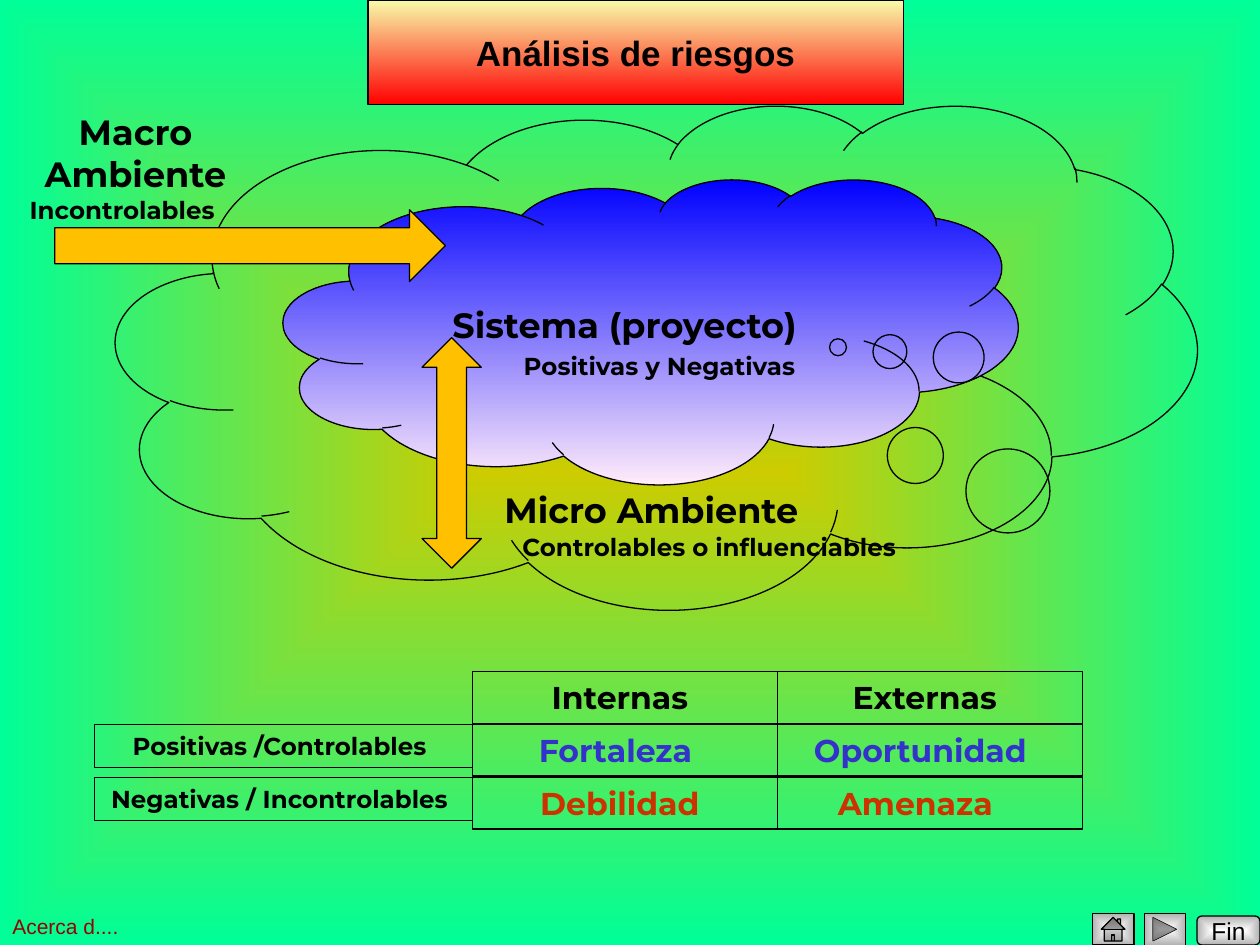
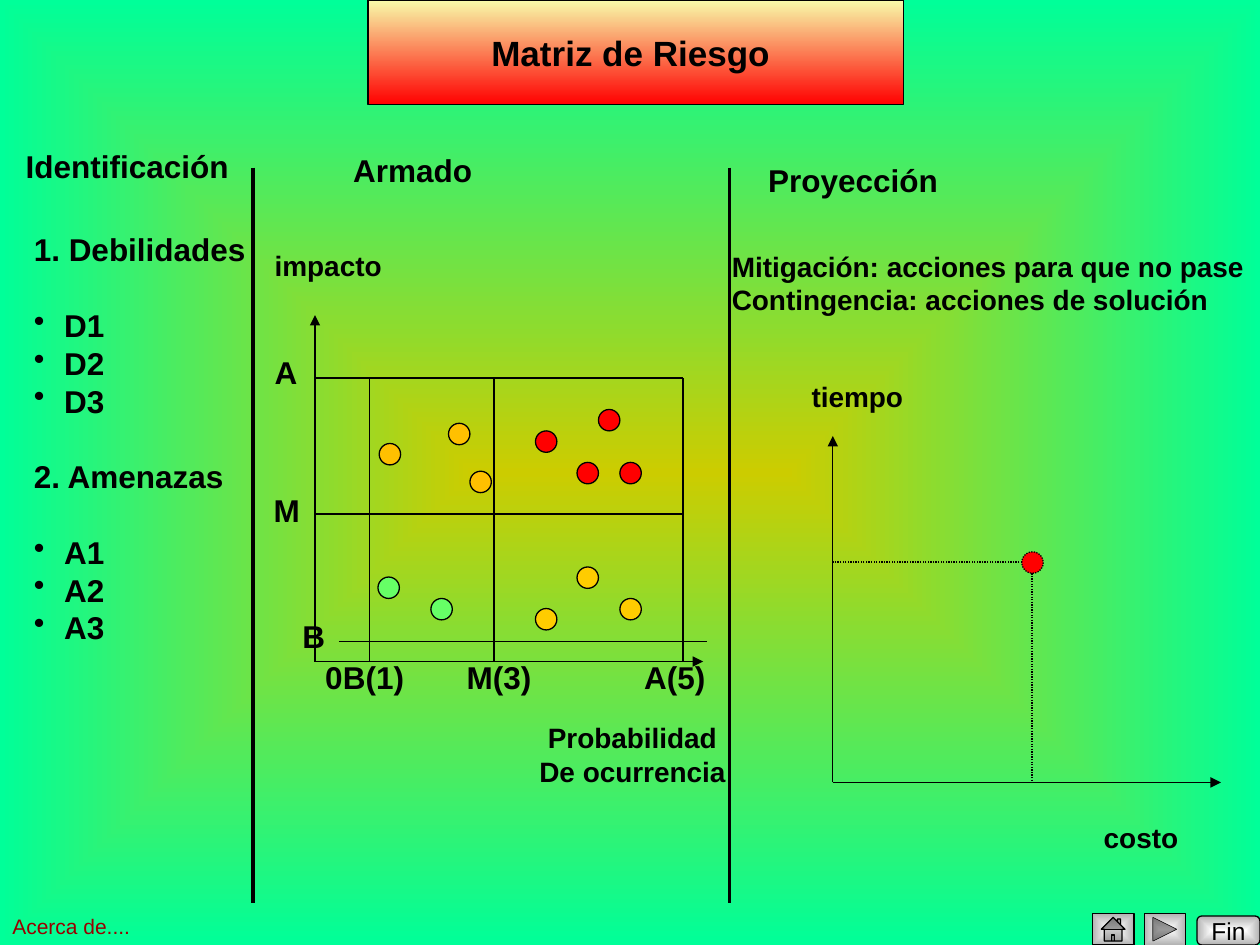
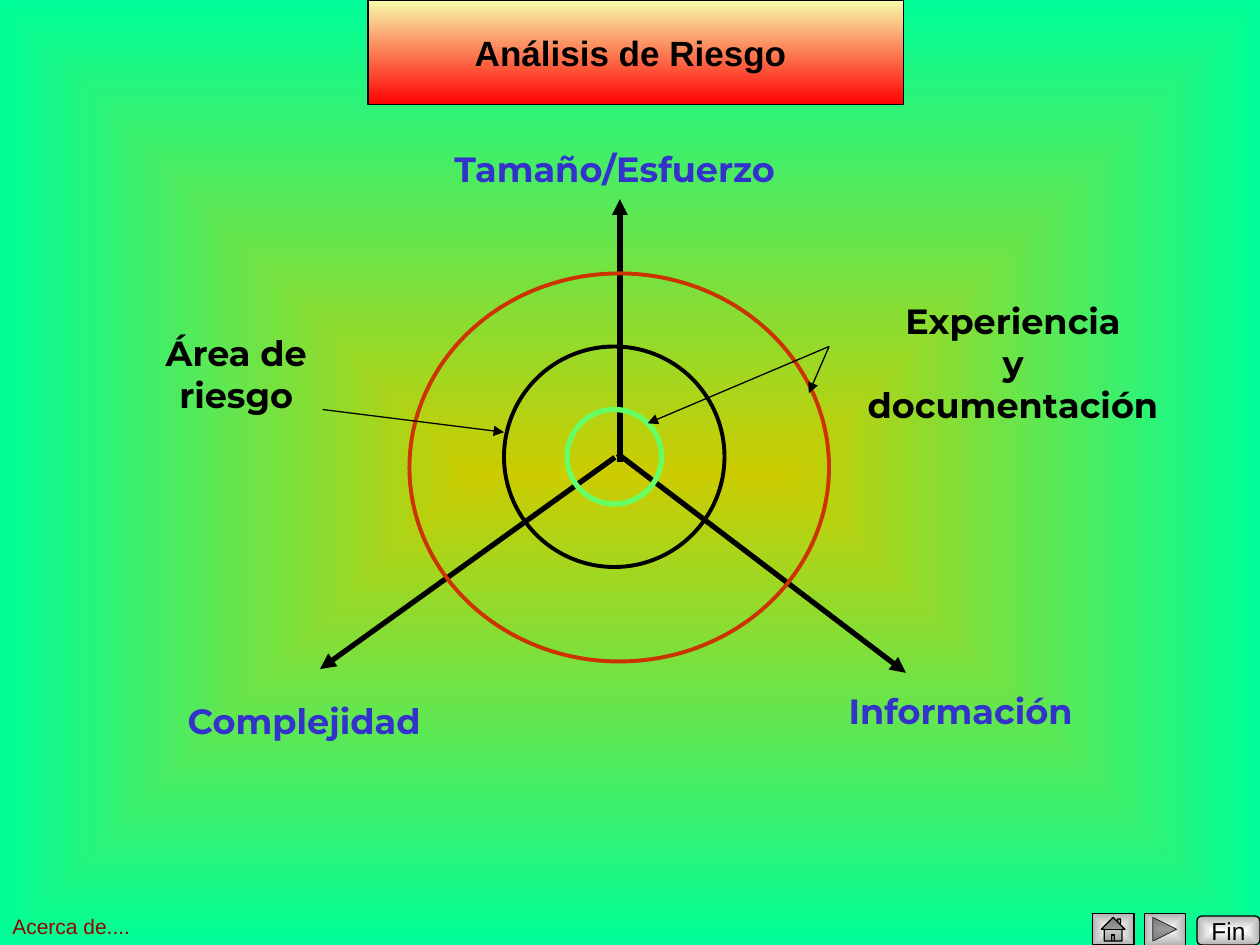
from dataclasses import dataclass
from typing import Any

from lxml.etree import SubElement
from pptx import Presentation
from pptx.dml.color import RGBColor
from pptx.enum.dml import MSO_LINE
from pptx.enum.shapes import MSO_CONNECTOR, MSO_SHAPE
from pptx.enum.text import MSO_ANCHOR, MSO_AUTO_SIZE, PP_ALIGN
from pptx.oxml import parse_xml
from pptx.oxml.ns import nsdecls, qn
from pptx.util import Inches, Pt

BLACK, BLUE, RUST, MAROON = "000000", "3333CC", "CC3300", "990000"
RED, AMBER, YELLOW, GREEN = "FF0000", "FFC000", "FFCC00", "66FF66"
BACKDROP = ("CCCC00", "00FF99")
TITLE_BAND = ("F8FCAA", "FF0000")
CLOUD = ("0000FF", "FFEBFA")
BUTTON = ("FFFFFF", "B2B2B2")
SANS, DISPLAY = "Arial", "Montserrat"
OFF_CENTRE = 0.18  # right inset that sets centred words slightly to the left


# Formatting helpers
def color(hex_value):
    return RGBColor.from_string(hex_value)


def apply(target, values):
    for name, value in values.items():
        setattr(target, name, value)


def gradient(fill, element, stops, center=None):
    """Top-down gradient, or one spreading from the middle when center is given."""
    fill.gradient()
    for stop, hex_value, position in zip(fill.gradient_stops, stops, (0, 1)):
        stop.color.rgb = color(hex_value)
        stop.position = position
    if center is None:
        fill.gradient_angle = 270
        return
    linear = next(element.iter(qn("a:lin")))
    linear.getparent().replace(linear, parse_xml(
        f'<a:path {nsdecls("a")} path="{center}"><a:fillToRect '
        'l="50000" t="50000" r="50000" b="50000"/></a:path>'))


def outline(line, hex_value=BLACK, width=0.75, dotted=False):
    line.color.rgb = color(hex_value)
    line.width = Pt(width)
    if dotted:
        line.dash_style = MSO_LINE.ROUND_DOT


def write(frame, lines, size, font=SANS, ink=BLACK, bold=True,
          align=PP_ALIGN.CENTER, **frame_format):
    apply(frame, {"word_wrap": False, **frame_format})
    for index, line in enumerate(lines):
        paragraph = frame.paragraphs[0] if index == 0 else frame.add_paragraph()
        paragraph.alignment = align
        run = paragraph.add_run()
        run.text = line
        apply(run.font, {"name": font, "size": Pt(size), "bold": bold})
        run.font.color.rgb = color(ink)


@dataclass
class Region:
    """Part of a slide; lengths are inches from its top left corner."""
    slide: Any
    left: float = 0
    top: float = 0

    def place(self, x, y):
        return Inches(self.left + x), Inches(self.top + y)

    def shape(self, preset, x, y, width, height, fill=None, edge=BLACK, weight=0.75,
              center=None, adjust=(), dotted=False):
        item = self.slide.shapes.add_shape(
            preset, *self.place(x, y), Inches(width), Inches(height))
        item.shadow.inherit = False
        if fill is None:
            item.fill.background()
        elif isinstance(fill, tuple):
            gradient(item.fill, item._element, fill, center)
        else:
            item.fill.solid()
            item.fill.fore_color.rgb = color(fill)
        outline(item.line, edge, weight, dotted)
        for index, value in enumerate(adjust):
            item.adjustments[index] = value
        return item

    def text(self, lines, x, y, width, height, size, **look):
        box = self.slide.shapes.add_textbox(
            *self.place(x, y), Inches(width), Inches(height))
        write(box.text_frame, lines, size,
              **{"auto_size": MSO_AUTO_SIZE.SHAPE_TO_FIT_TEXT, **look})
        return box

    def line(self, start, end, weight=0.75, arrow=False, dotted=False):
        link = self.slide.shapes.add_connector(
            MSO_CONNECTOR.STRAIGHT, *self.place(*start), *self.place(*end))
        outline(link.line, BLACK, weight, dotted)
        properties = link._element.spPr
        if arrow:
            SubElement(properties.find(qn("a:ln")), qn("a:tailEnd"), type="triangle")
        SubElement(properties, qn("a:effectLst"))

    def dots(self, fill, spots, dotted=False):
        for x, y in spots:
            self.shape(MSO_SHAPE.FLOWCHART_CONNECTOR, x, y, 0.17, 0.17, fill,
                       dotted=dotted)


# Parts shared by all slides
def title_band(slide, heading, right_inset):
    title = slide.shapes.title
    apply(title, {"left": Inches(2.92), "top": Inches(0),
                  "width": Inches(4.25), "height": Inches(0.83)})
    title._element.spPr.find(qn("a:xfrm")).addnext(parse_xml(
        f'<a:prstGeom {nsdecls("a")} prst="downArrowCallout"><a:avLst/></a:prstGeom>'))
    for index, value in enumerate((1.275, 1.275, 0.167, 0.667)):
        title.adjustments[index] = value
    gradient(title.fill, title._element, TITLE_BAND)
    outline(title.line)
    write(title.text_frame, [heading], 20, auto_size=MSO_AUTO_SIZE.NONE,
          vertical_anchor=MSO_ANCHOR.MIDDLE, margin_right=Inches(right_inset))


def footer(region, about):
    end = region.shape(MSO_SHAPE.ROUNDED_RECTANGLE, 9.5, 0.07, 0.5, 0.23, BUTTON,
                       center="shape")
    write(end.text_frame, ["Fin"], 14, bold=False,
          vertical_anchor=MSO_ANCHOR.MIDDLE)
    for preset, x, weight in ((MSO_SHAPE.ACTION_BUTTON_FORWARD_OR_NEXT, 9.08, 0.25),
                              (MSO_SHAPE.ACTION_BUTTON_HOME, 8.67, 0.75)):
        region.shape(preset, x, 0.05, 0.33, 0.25, BUTTON, weight=weight, center="rect")
    region.text([about], 0, 0, 1.67, 0.3, 12, ink=MAROON, bold=False,
                align=PP_ALIGN.LEFT, word_wrap=True)


def new_slide(deck, heading, about="Acerca de....", title_inset=OFF_CENTRE):
    slide = deck.slides.add_slide(deck.slide_layouts[5])
    gradient(slide.background.fill, slide._element, BACKDROP, "shape")
    title_band(slide, heading, title_inset)
    footer(Region(slide, 0, 7.2), about)
    return slide


# Slide 1: environments and the strengths and threats grid
def environments(region):
    region.shape(MSO_SHAPE.CLOUD_CALLOUT, 0.92, 0, 8.58, 4, adjust=(0.178, 0.146))
    system = region.shape(MSO_SHAPE.CLOUD_CALLOUT, 2.25, 0.59, 5.83, 2.42, CLOUD,
                          adjust=(0.255, 0.052))
    write(system.text_frame, ["Sistema (proyecto)"], 20, DISPLAY,
          vertical_anchor=MSO_ANCHOR.MIDDLE)
    region.text(["Macro", "Ambiente"], 0.25, 0, 1.65, 0.77, 20, font=DISPLAY)
    region.text(["Micro Ambiente"], 3.67, 3, 3, 0.43, 20, font=DISPLAY, word_wrap=True)
    for note, x, y, width in (("Positivas y Negativas", 3.95, 1.91, 2.57),
                              ("Controlables o influenciables", 3.93, 3.34, 3.4),
                              ("Incontrolables", 0.09, 0.67, 1.76)):
        region.text([note], x, y, width, 0.34, 14, font=DISPLAY)
    region.shape(MSO_SHAPE.UP_DOWN_ARROW, 3.35, 1.85, 0.47, 1.83, AMBER)
    macro_arrow = region.shape(MSO_SHAPE.DOWN_ARROW, 1.7, -0.43, 0.57, 3.1, AMBER)
    macro_arrow.rotation = 270


def factor_grid(region):
    label_width, column_width, row_step = 3, 2.42, 0.42

    def cell(words, x, row, width, height, size, ink, right_inset):
        box = region.shape(MSO_SHAPE.RECTANGLE, x, row * row_step, width, height)
        write(box.text_frame, [words], size, DISPLAY, ink, word_wrap=True,
              vertical_anchor=MSO_ANCHOR.TOP, margin_right=Inches(right_inset))

    for row, label in enumerate(("Positivas /Controlables",
                                 "Negativas / Incontrolables"), 1):
        cell(label, 0, row, label_width, 0.34, 14, BLACK, 0.16)
    rows = ((BLACK, ("Internas", 0.18), ("Externas", 0.18)),
            (BLUE, ("Fortaleza", 0.25), ("Oportunidad", 0.25)),
            (RUST, ("Debilidad", 0.18), ("Amenaza", 0.33)))
    for row, (ink, *factors) in enumerate(rows):
        for column, (factor, inset) in enumerate(factors):
            cell(factor, label_width + column * column_width, row,
                 column_width, 0.41, 18, ink, inset)


# Slide 2: identification, matrix and projection
def identification(region):
    items = ["1. Debilidades", "D1", "D2", "D3", "2. Amenazas", "A1", "A2", "A3"]
    box = region.text(items, 0.1, 0.66, 1.97, 3.74, 18, align=PP_ALIGN.LEFT)
    line_height = Pt(21.6)
    for index, paragraph in enumerate(box.text_frame.paragraphs):
        paragraph.line_spacing = line_height
        if index in (1, 4, 5):
            paragraph.space_before = line_height
        if index not in (0, 4):
            properties = paragraph._p.get_or_add_pPr()
            properties.set("marL", str(Inches(0.24)))
            properties.set("indent", str(-Inches(0.24)))
            SubElement(properties, qn("a:buChar"), char="•")
    region.text(["Identificación"], 0, 0, 1.88, 0.4, 18)


def axes(region):
    origin = (0, 2.75)
    region.line(origin, (0, 0), arrow=True)
    region.line(origin, (3.08, 2.75), arrow=True)


def risk_matrix(region):
    axes(region)
    for y in (0.5, 1.58):
        region.line((0, y), (2.92, y))
    region.line((0.19, 2.59), (3.11, 2.59))
    for x in (0.43, 1.42, 2.92):
        region.line((x, 0.5), (x, 2.75))
    region.text(["Armado"], 0.16, -1.35, 1.23, 0.4, 18)
    region.text(["impacto"], -0.42, -0.58, 1.05, 0.37, 16)
    region.text(["Probabilidad", "De ocurrencia"], 1.67, 3.17, 1.7, 0.64, 16)
    for level, x, y, width in (
            ("A", -0.42, 0.25, 0.38), ("M", -0.43, 1.35, 0.41), ("B", -0.2, 2.35, 0.38),
            ("0", -0.02, 2.67, 0.34), ("B(1)", 0.12, 2.67, 0.69),
            ("M(3)", 1.1, 2.67, 0.72), ("A(5)", 2.51, 2.67, 0.69)):
        region.text([level], x, y, width, 0.4, 18)
    region.dots(RED, ((1.75, 0.92), (2.25, 0.75), (2.08, 1.17), (2.42, 1.17)))
    region.dots(YELLOW, ((2.08, 2), (2.42, 2.25), (1.75, 2.33)))
    region.dots(GREEN, ((0.5, 2.08), (0.92, 2.25)))
    region.dots(AMBER, ((1.06, 0.86), (1.23, 1.24), (0.51, 1.02)))


def projection(region):
    axes(region)
    region.text(["Proyección"], -0.65, -2.23, 1.62, 0.4, 18)
    region.text(["Mitigación: acciones para que no pase",
                 "Contingencia: acciones de solución"],
                -0.9, -1.53, 4.32, 0.64, 16, align=PP_ALIGN.LEFT)
    region.text(["tiempo"], -0.27, -0.5, 0.93, 0.37, 16)
    region.text(["costo"], 2.05, 3, 0.79, 0.37, 16)
    region.dots(RED, ((1.5, 0.92),), dotted=True)
    region.line((1.58, 1.09), (1.58, 2.75), dotted=True)
    region.line((1.5, 1), (0, 1), dotted=True)


# Slide 3: risk area over three axes
def risk_area(region):
    for start, tip in (((4.17, 2.55), (4.17, 0.46)),
                       ((4.15, 2.48), (6.44, 4.22)),
                       ((4.13, 2.51), (1.79, 4.19))):
        region.line(start, tip, weight=3, arrow=True)
    for axis, x, y, width, inset in (("Tamaño/Esfuerzo", 2.71, 0, 2.92, 0.18),
                                     ("Complejidad", 0.58, 4.38, 2.25, 0.18),
                                     ("Información", 5.83, 4.3, 2.25, 0.26)):
        region.text([axis], x, y, width, 0.43, 20, font=DISPLAY, ink=BLUE,
                    word_wrap=True, margin_right=Inches(inset))
    for x, y, width, height, edge, weight in ((3.25, 1.63, 1.75, 1.75, BLACK, 2.25),
                                              (2.5, 1.05, 3.33, 3.08, RUST, 2.25),
                                              (3.75, 2.13, 0.75, 0.75, GREEN, 3)):
        region.shape(MSO_SHAPE.OVAL, x, y, width, height, edge=edge, weight=weight)
    region.text(["Área de riesgo"], 0, 1.46, 2.25, 0.77, 20, font=DISPLAY,
                word_wrap=True)
    region.text(["Experiencia", "y", "documentación"], 6, 1.21, 2.58, 1.1, 20,
                font=DISPLAY, word_wrap=True)
    for start, tip in (((1.81, 2.13), (3.25, 2.31)),
                       ((5.83, 1.63), (4.39, 2.24)),
                       ((5.83, 1.63), (5.67, 2))):
        region.line(start, tip, arrow=True)


def main():
    deck = Presentation()
    apply(deck, {"slide_width": Inches(10), "slide_height": Inches(7.5)})

    analysis = new_slide(deck, "Análisis de riesgos", "Acerca d....", title_inset=0.1)
    environments(Region(analysis, 0, 0.83))
    factor_grid(Region(analysis, 0.75, 5.33))

    matrix = new_slide(deck, "Matriz de Riesgo")
    dividers = Region(matrix, 2.01, 1.33)
    for x in (0, 3.78):
        dividers.line((x, 0), (x, 5.84), weight=2.25)
    identification(Region(matrix, 0.07, 1.12))
    risk_matrix(Region(matrix, 2.5, 2.5))
    projection(Region(matrix, 6.61, 3.46))

    area = new_slide(deck, "Análisis de Riesgo")
    risk_area(Region(area, 0.75, 1.12))

    deck.save("out.pptx")


if __name__ == "__main__":
    main()
